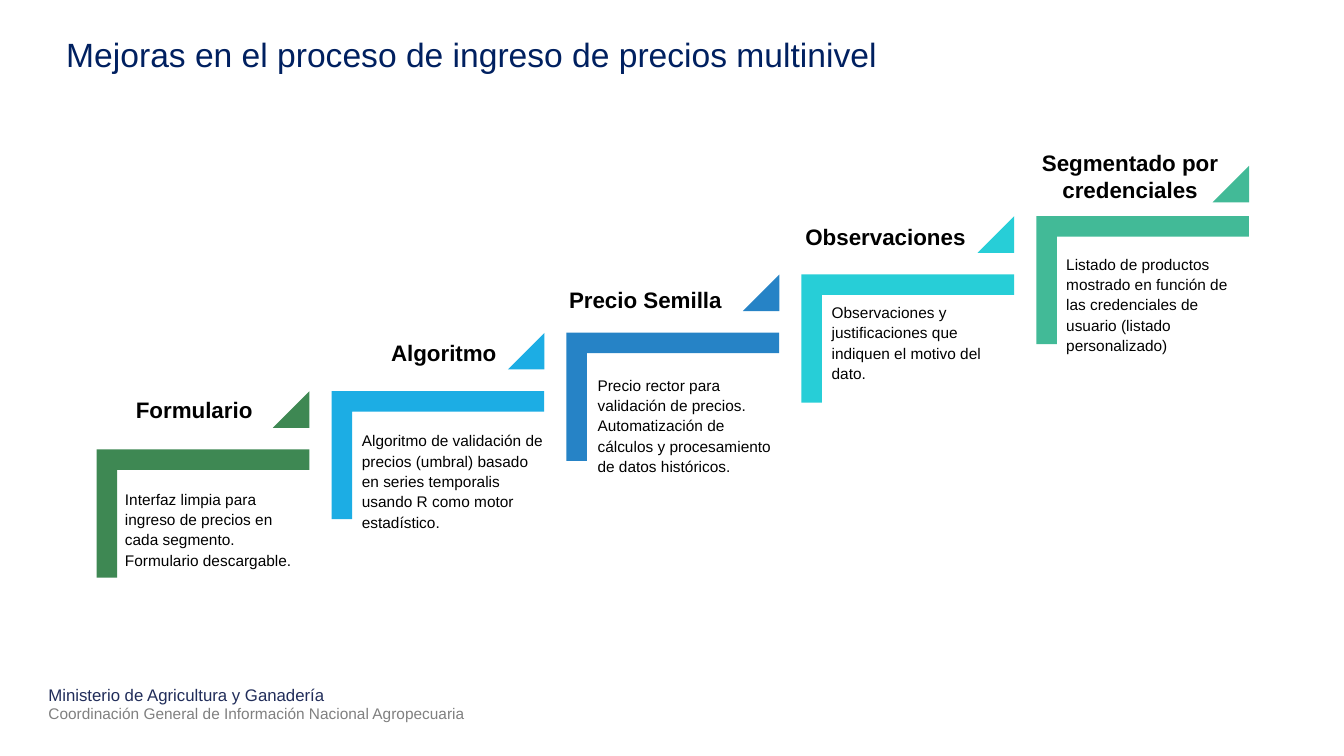
from dataclasses import dataclass

from pptx import Presentation
from pptx.dml.color import RGBColor
from pptx.enum.shapes import MSO_SHAPE as Kind
from pptx.enum.text import MSO_ANCHOR as Anchor, PP_ALIGN as Align
from pptx.slide import Slide
from pptx.text.text import TextFrame
from pptx.util import Cm, Pt

NAVY = RGBColor(0x00, 0x20, 0x60)
INK = RGBColor(0x21, 0x2D, 0x5A)
GRAY = RGBColor(0x80, 0x80, 0x80)
BLACK = RGBColor(0x00, 0x00, 0x00)
GREEN = RGBColor(0x3E, 0x88, 0x53)
SKY = RGBColor(0x1C, 0xAD, 0xE4)
BLUE = RGBColor(0x26, 0x83, 0xC6)
CYAN = RGBColor(0x27, 0xCE, 0xD7)
MINT = RGBColor(0x42, 0xBA, 0x97)

FONT = "Arial"
STEP_X, STEP_Y = 5.92, 1.47


@dataclass(frozen=True)
class Box:
    left: float
    top: float
    width: float
    height: float


@dataclass(frozen=True)
class Line:
    text: str
    size: float
    color: RGBColor
    bold: bool = False


@dataclass(frozen=True)
class Step:
    color: RGBColor
    head: tuple[str, ...]
    head_box: Box
    note: str
    note_box: Box
    drop: float = 0


STEPS = [
    Step(GREEN, ("Formulario",), Box(1.63, 9.86, 6.53, 0.94),
         "Interfaz limpia para ingreso de precios en cada segmento. "
         "Formulario descargable.", Box(3.15, 11.66, 4.6, 3.33)),
    Step(SKY, ("Algoritmo",), Box(7.92, 8.41, 6.53, 0.94),
         "Algoritmo de validación de precios (umbral) basado en series "
         "temporalis usando R como motor estadístico.",
         Box(9.12, 10.44, 4.6, 3.33)),
    Step(BLUE, ("Precio Semilla",), Box(13, 7.09, 6.53, 0.94),
         "Precio rector para validación de precios. Automatización de "
         "cálculos y procesamiento de datos históricos.",
         Box(15.06, 9.04, 4.6, 3.33)),
    Step(CYAN, ("Observaciones",), Box(19.05, 5.51, 6.53, 0.94),
         "Observaciones y justificaciones que indiquen el motivo del dato.",
         Box(20.96, 6.95, 4.6, 3.33)),
    Step(MINT, ("Segmentado por", "credenciales"), Box(24.1, 3.63, 8.76, 2.31),
         "Listado de productos mostrado en función de las credenciales de "
         "usuario (listado personalizado)", Box(26.87, 5.99, 4.6, 3.33),
         drop=0.2),
]


def add_text(slide: Slide, box: Box, lines: list[Line],
             align: Align = Align.LEFT, anchor: Anchor = Anchor.TOP,
             space: float = 1) -> TextFrame:
    area = slide.shapes.add_textbox(Cm(box.left), Cm(box.top),
                                    Cm(box.width), Cm(box.height))
    frame = area.text_frame
    frame.word_wrap = True
    frame.vertical_anchor = anchor
    for i, line in enumerate(lines):
        para = frame.add_paragraph() if i else frame.paragraphs[0]
        para.alignment = align
        para.line_spacing = space
        run = para.add_run()
        run.text = line.text
        font = run.font
        font.name = FONT
        font.size = Pt(line.size)
        font.bold = line.bold
        font.color.rgb = line.color
    return frame


def add_form(slide: Slide, kind: Kind, box: Box, color: RGBColor,
             tweaks: list[float], turn: float = 0) -> None:
    form = slide.shapes.add_shape(kind, Cm(box.left), Cm(box.top),
                                  Cm(box.width), Cm(box.height))
    form.shadow.inherit = False
    form.fill.solid()
    form.fill.fore_color.rgb = color
    form.line.fill.background()
    form.rotation = turn
    for i, tweak in enumerate(tweaks):
        form.adjustments[i] = tweak


def add_step(slide: Slide, i: int, step: Step) -> None:
    right, rise = i * STEP_X, i * STEP_Y
    add_form(slide, Kind.CORNER, Box(3.5 + right, 10.26 - rise, 3.23, 5.36),
             step.color, [0.16, 0.16], turn=90)
    add_form(slide, Kind.ISOSCELES_TRIANGLE,
             Box(6.88 + right, 9.86 - rise + step.drop, 0.92, 0.92),
             step.color, [1])
    add_text(slide, step.head_box,
             [Line(text, 16, BLACK, True) for text in step.head],
             align=Align.CENTER)
    frame = add_text(slide, step.note_box, [Line(step.note, 11, BLACK)],
                     anchor=Anchor.MIDDLE, space=1.1)
    frame.margin_left = frame.margin_right = 0
    frame.margin_top = frame.margin_bottom = 0


def main() -> None:
    deck = Presentation()
    deck.slide_width, deck.slide_height = Cm(33.87), Cm(19.05)
    slide = deck.slides.add_slide(deck.slide_layouts[6])
    add_text(slide, Box(0.97, 17.12, 16.36, 1.27), [
        Line("Ministerio de Agricultura y Ganadería", 12, INK),
        Line("Coordinación General de Información Nacional Agropecuaria",
             11, GRAY),
    ])
    add_text(slide, Box(1.42, 0.79, 31.04, 1.22), [
        Line("Mejoras en el proceso de ingreso de precios multinivel",
             24, NAVY),
    ], anchor=Anchor.BOTTOM, space=0.9)
    for i, step in enumerate(STEPS):
        add_step(slide, i, step)
    deck.save("out.pptx")


if __name__ == "__main__":
    main()
